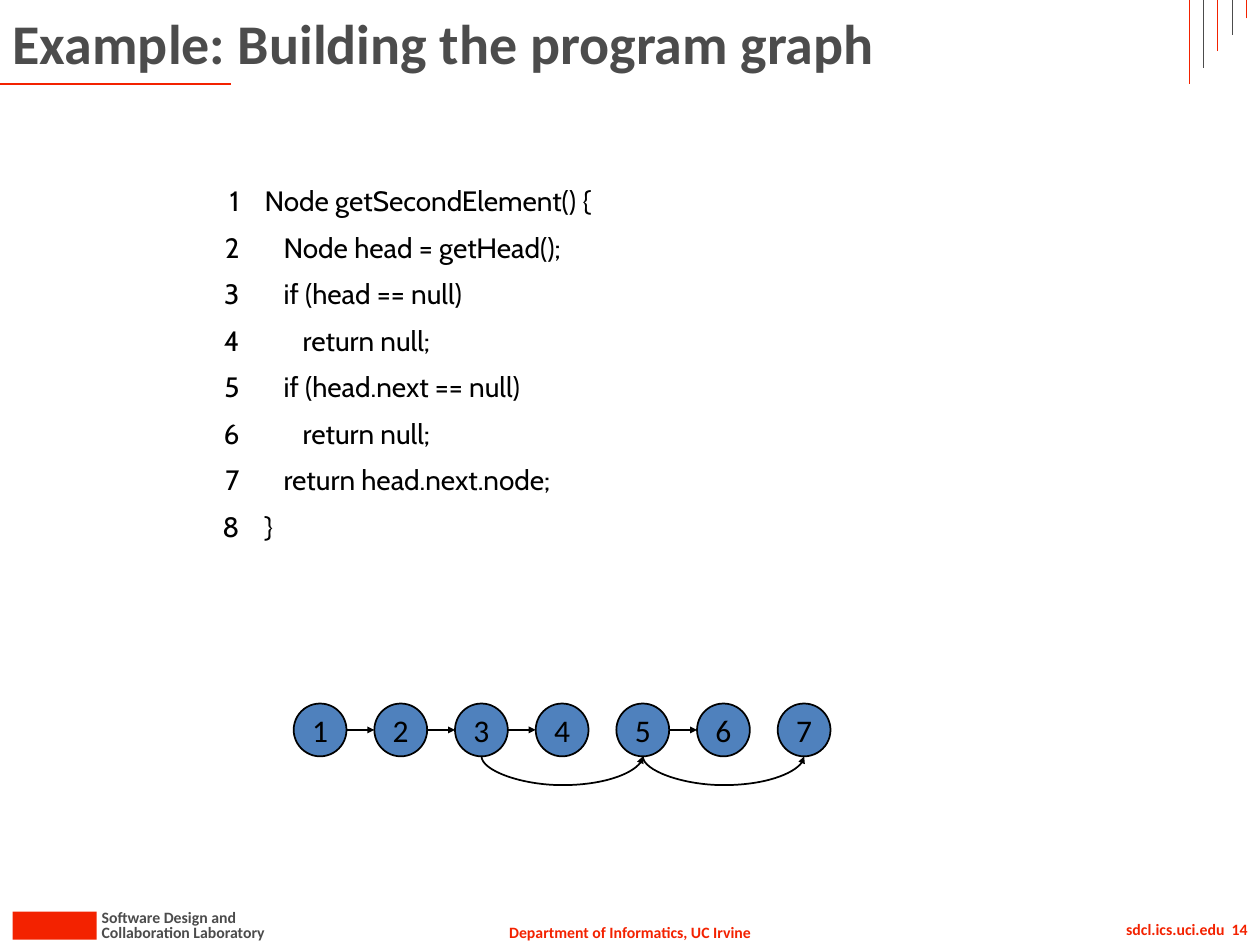
from lxml import etree
from pptx import Presentation
from pptx.dml.color import RGBColor
from pptx.enum import shapes, text
from pptx.oxml import ns
from pptx.util import Pt

RED = RGBColor(0xF3, 0x22, 0x00)
GREY = RGBColor(0x4C, 0x4C, 0x4C)
BLUE = RGBColor(0x4F, 0x81, 0xBD)
BLACK = RGBColor(0, 0, 0)

LEFT, CENTER, RIGHT = text.PP_ALIGN.LEFT, text.PP_ALIGN.CENTER, text.PP_ALIGN.RIGHT

# Indent level and text of each code line
CODE = [
    (0, "Node getSecondElement() {"),
    (1, "Node head = getHead();"),
    (1, "if (head == null)"),
    (2, "return null;"),
    (1, "if (head.next == null)"),
    (2, "return null;"),
    (1, "return head.next.node;"),
    (0, "}"),
]
STEPS = [(1, 2), (2, 3), (3, 4), (5, 6)]
JUMPS = [(3, 5), (5, 7)]


def write(frame, words, font, size, color, align=LEFT, bold=False):
    frame.text = words
    para = frame.paragraphs[0]
    para.alignment = align
    para.font.name = font
    para.font.size = Pt(size)
    para.font.bold = bold
    para.font.color.rgb = color


def add_line(page, x1, y1, x2, y2, color, width,
             kind=shapes.MSO_CONNECTOR.STRAIGHT, arrow=False):
    line = page.shapes.add_connector(kind, Pt(x1), Pt(y1), Pt(x2), Pt(y2))
    line.line.color.rgb = color
    line.line.width = Pt(width)
    if arrow:
        etree.SubElement(line.line._get_or_add_ln(), ns.qn("a:tailEnd"),
                         type="triangle", w="sm", len="sm")
    etree.SubElement(line._element.spPr, ns.qn("a:effectLst"))
    return line


def add_label(page, left, top, width, height, words, color, align=LEFT, wrap=False):
    box = page.shapes.add_textbox(Pt(left), Pt(top), Pt(width), Pt(height))
    box.text_frame.word_wrap = wrap
    write(box.text_frame, words, "Calibri", 9, color, align, bold=True)


def add_footer(page, left, top, width):
    add_label(page, left + width / 2 - 77.5, top + 13.5, 155, 18,
              "Department of Informatics, UC Irvine", RED, CENTER)
    add_label(page, left + 51, top + 13.5, 110, 18, "Collaboration Laboratory", GREY)
    add_label(page, left + 51, top + 5, 93, 18, "Software Design and", GREY)
    add_label(page, left + width - 155, top + 12, 155, 18,
              "sdcl.ics.uci.edu  14", RED, RIGHT, wrap=True)

    # Plain block beside the laboratory name
    block = page.shapes.add_shape(shapes.MSO_SHAPE.RECTANGLE,
                                  Pt(left + 7.2), Pt(top + 11), Pt(48), Pt(16))
    block.shadow.inherit = False
    block.fill.solid()
    block.fill.fore_color.rgb = RED
    block.line.fill.background()


def add_header(page, left, top, width, height):
    # Rule under the title, and ticks that shorten towards the right
    add_line(page, left, top + height, left + 132, top + height, RED, 1.5)
    for i in range(5):
        x = left + width - 40.3 + 8.1 * i
        add_line(page, x, top + height - 9.36 * i, x, top, GREY if i % 2 else RED, 0.5)

    title = page.shapes.title
    title.left, title.top = Pt(left), Pt(top)
    title.width, title.height = Pt(width - 72), Pt(height)
    frame = title.text_frame
    frame.auto_size = text.MSO_AUTO_SIZE.NONE
    frame.vertical_anchor = text.MSO_ANCHOR.MIDDLE
    write(frame, "Example: Building the program graph", "Calibri", 32, GREY, bold=True)


def add_code(page, left, top, width, height):
    table = page.shapes.add_table(len(CODE), 2, Pt(left), Pt(top), Pt(width), Pt(height)).table
    table.first_row = table.horz_banding = False
    table.columns[0].width, table.columns[1].width = Pt(36), Pt(width - 36)
    for number, (level, code) in enumerate(CODE, 1):
        label, line = table.rows[number - 1].cells
        write(label.text_frame, str(number), "Cabin", 16, BLACK, RIGHT)
        write(line.text_frame, code, "Cabin", 16, BLACK)
        line.margin_left = Pt(7.2 + 10.9 * level)
        for cell in (label, line):
            cell.fill.background()
            cell.text_frame.paragraphs[0].space_before = Pt(3.2)


def add_jump(page, x1, x2, y, depth):
    # A curve that leaves and enters from below: a thin connector turned a quarter
    thin, span = 0.12, x2 - x1
    middle = (x1 + x2) / 2
    curve = add_line(page, middle - thin / 2, y - span / 2, middle + thin / 2, y + span / 2,
                     BLACK, 1, shapes.MSO_CONNECTOR.CURVE, arrow=True)
    properties = curve._element.spPr
    frame = properties.find(ns.qn("a:xfrm"))
    frame.set("rot", str(270 * 60000))
    frame.set("flipH", "1")
    geometry = properties.find(ns.qn("a:prstGeom"))
    guides = geometry.find(ns.qn("a:avLst"))
    if guides is None:
        guides = etree.SubElement(geometry, ns.qn("a:avLst"))
    etree.SubElement(guides, ns.qn("a:gd"), name="adj1",
                     fmla=f"val {round(depth / thin * 100000)}")


def add_graph(page, left, top, width, size):
    pitch = (width - size) / 6
    starts = {n: left + pitch * (n - 1) for n in range(1, 8)}
    for number, x in starts.items():
        node = page.shapes.add_shape(shapes.MSO_SHAPE.OVAL, Pt(x), Pt(top), Pt(size), Pt(size))
        node.shadow.inherit = False
        node.fill.solid()
        node.fill.fore_color.rgb = BLUE
        node.line.color.rgb = BLACK
        node.line.width = Pt(1)
        node.text_frame.word_wrap = False
        node.text_frame.vertical_anchor = text.MSO_ANCHOR.MIDDLE
        write(node.text_frame, str(number), "Calibri", 18, BLACK, CENTER)
    for a, b in STEPS:
        y = top + size / 2
        add_line(page, starts[a] + size, y, starts[b], y, BLACK, 1, arrow=True)
    for a, b in JUMPS:
        add_jump(page, starts[a] + size / 2, starts[b] + size / 2, top + size, 17.5)


def main():
    deck = Presentation()
    deck.slide_width, deck.slide_height = Pt(720), Pt(540)
    page = deck.slides.add_slide(deck.slide_layouts[5])
    add_footer(page, 0, 510, 720)
    add_header(page, 0, 0, 720, 48)
    add_code(page, 108, 102, 480, 212.8)
    add_graph(page, 167.8, 402, 306.8, 30.2)
    deck.save("out.pptx")


if __name__ == "__main__":
    main()
